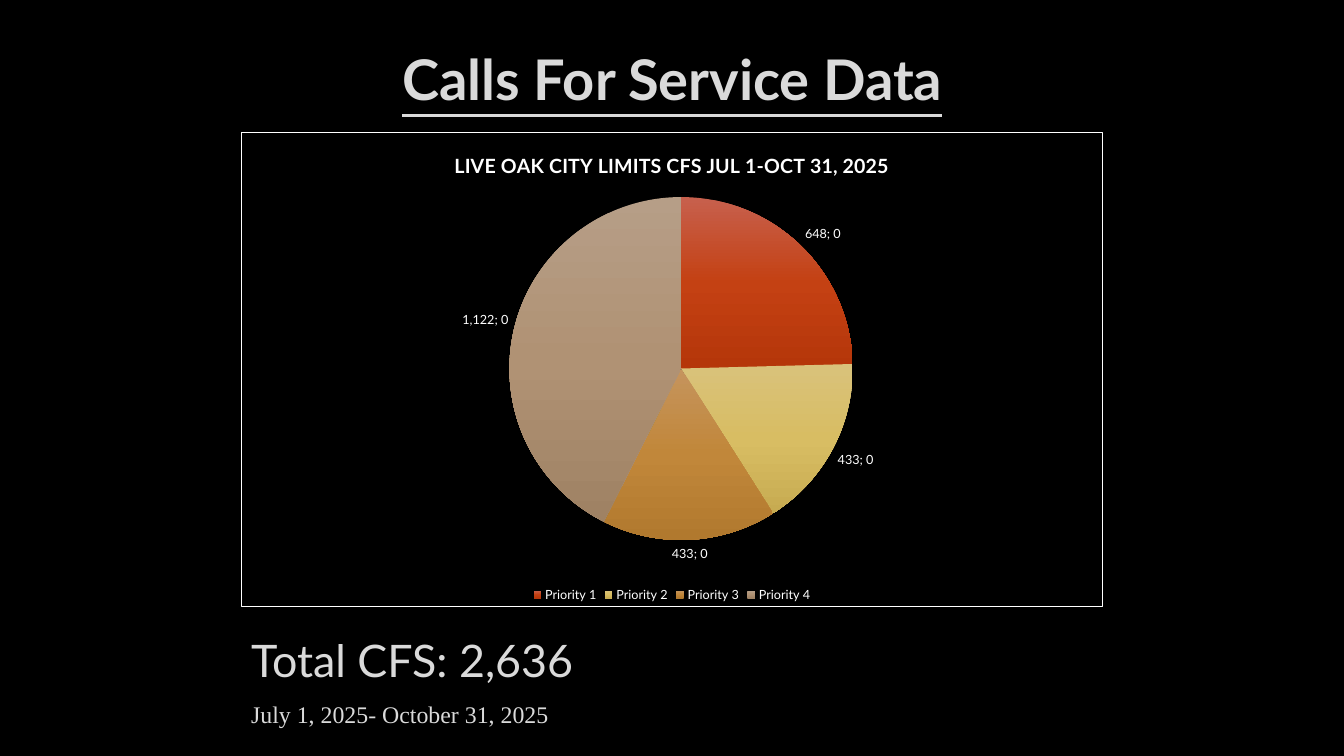
from pptx import Presentation
from pptx.chart.data import CategoryChartData
from pptx.dml.color import RGBColor
from pptx.enum.chart import XL_CHART_TYPE as ChartType, XL_LABEL_POSITION as LabelPos, XL_LEGEND_POSITION as LegendPos
from pptx.enum.text import MSO_ANCHOR as Anchor, MSO_AUTO_SIZE as AutoSize, PP_ALIGN as Align
from pptx.oxml import parse_xml
from pptx.oxml.ns import nsdecls
from pptx.util import Pt

BLACK = RGBColor(0x00, 0x00, 0x00)
WHITE = RGBColor(0xFF, 0xFF, 0xFF)
SILVER = RGBColor(0xDA, 0xDA, 0xDA)
REDS = [RGBColor(0xC7, 0x60, 0x4D), RGBColor(0xC4, 0x41, 0x13), RGBColor(0xB5, 0x36, 0x0A)]
YELLOWS = [RGBColor(0xD9, 0xC2, 0x7B), RGBColor(0xD8, 0xBD, 0x63), RGBColor(0xC7, 0xAB, 0x51)]
OCHRES = [RGBColor(0xC5, 0x94, 0x5D), RGBColor(0xC1, 0x87, 0x3A), RGBColor(0xB1, 0x79, 0x2E)]
TANS = [RGBColor(0xB6, 0x9E, 0x87), RGBColor(0xB0, 0x92, 0x74), RGBColor(0x9F, 0x82, 0x64)]

SLIDE_SIZE = (1344, 756)
SCALE = 12192000 / SLIDE_SIZE[0]
FONT = "Lato"

HEADING = "Calls For Service Data"
HEADING_BOX = (102, 25, 1141, 107)
TOTALS = [("Total CFS: 2,636", FONT, 32), ("July 1, 2025- October 31, 2025", "Times New Roman", 17)]
TOTALS_BOX = (241, 628, 538, 107)
CHART_TITLE = "LIVE OAK CITY LIMITS CFS JUL 1-OCT 31, 2025"
CHART_BOX = (241, 132, 862, 475)
PRIORITIES = [
    ("Priority 1", 648, REDS),
    ("Priority 2", 433, YELLOWS),
    ("Priority 3", 433, OCHRES),
    ("Priority 4", 1122, TANS),
]


def emu(box):
    """Turn px lengths into EMU."""
    return [round(length * SCALE) for length in box]


def set_font(font, size, color, name=FONT, bold=False):
    """Format a font."""
    font.name, font.size, font.bold = name, Pt(size), bold
    font.color.rgb = color


def place(placeholder, box, anchor):
    """Move a placeholder and return its text frame."""
    placeholder.left, placeholder.top, placeholder.width, placeholder.height = emu(box)
    frame = placeholder.text_frame
    frame.word_wrap = True
    frame.auto_size = AutoSize.NONE
    frame.vertical_anchor = anchor
    return frame


def add_heading(slide):
    """Fill the title placeholder."""
    frame = place(slide.shapes.title, HEADING_BOX, Anchor.MIDDLE)
    frame.text = HEADING
    heading = frame.paragraphs[0]
    heading.alignment = Align.CENTER
    set_font(heading.font, 40, SILVER, bold=True)
    heading.font.underline = True


def add_totals(slide):
    """Fill the body placeholder with unbulleted lines."""
    frame = place(slide.placeholders[1], TOTALS_BOX, Anchor.TOP)
    frame.text = "\n".join(text for text, _, _ in TOTALS)
    for line, (_, name, size) in zip(frame.paragraphs, TOTALS):
        set_font(line.font, size, SILVER, name)
        line.space_after = Pt(6)
        properties = line._p.get_or_add_pPr()
        properties.set("marL", "0")
        properties.set("indent", "0")
        bullet_off = parse_xml(f"<a:buNone {nsdecls('a')}/>")
        properties.find("{*}defRPr").addprevious(bullet_off)


def gradient(colors):
    """Build a top-to-bottom gradient with evenly spaced stops."""
    step = 100000 // (len(colors) - 1)
    stops = "".join(
        f'<a:gs pos="{i * step}"><a:srgbClr val="{color}"/></a:gs>' for i, color in enumerate(colors)
    )
    return parse_xml(
        f'<a:gradFill {nsdecls("a")} rotWithShape="1"><a:gsLst>{stops}</a:gsLst>'
        '<a:lin ang="5400000" scaled="0"/></a:gradFill>'
    )


def add_pie(slide):
    """Add the pie chart of calls by priority."""
    calls = CategoryChartData(number_format="#,##0")
    calls.categories = [name for name, _, _ in PRIORITIES]
    calls.add_series("Series 1", [count for _, count, _ in PRIORITIES])
    chart = slide.shapes.add_chart(ChartType.PIE, *emu(CHART_BOX), calls).chart
    set_font(chart.font, 10, WHITE)

    chart.has_title = True
    chart.chart_title.include_in_layout = False
    chart.chart_title.text_frame.text = CHART_TITLE
    set_font(chart.chart_title.text_frame.paragraphs[0].font, 14, WHITE, bold=True)

    chart.has_legend = True
    chart.legend.position = LegendPos.BOTTOM
    chart.legend.include_in_layout = False
    set_font(chart.legend.font, 9, WHITE)

    pie = chart.plots[0]
    pie.vary_by_categories = True
    series = pie.series[0]
    for i, (_, _, colors) in enumerate(PRIORITIES):
        point = series.points[i].format
        point.line.fill.background()
        point.fill.gradient()
        fill = series._element.xpath("c:dPt/c:spPr/a:gradFill")[i]
        fill.getparent().replace(fill, gradient(colors))

    labels = series.data_labels
    labels.show_value = labels.show_percentage = True
    labels.position = LabelPos.OUTSIDE_END
    labels.number_format, labels.number_format_is_linked = "#,##0", False
    set_font(labels.font, 9, WHITE)

    border = parse_xml(
        f'<c:spPr {nsdecls("c", "a")}><a:noFill/><a:ln w="{Pt(0.75)}"><a:solidFill>'
        f'<a:srgbClr val="{WHITE}"/></a:solidFill></a:ln></c:spPr>'
    )
    chart._chartSpace.find("{*}chart").addnext(border)


def main():
    """Build and save the slide."""
    deck = Presentation()
    deck.slide_width, deck.slide_height = emu(SLIDE_SIZE)
    slide = deck.slides.add_slide(deck.slide_layouts[1])
    slide.background.fill.solid()
    slide.background.fill.fore_color.rgb = BLACK
    add_heading(slide)
    add_totals(slide)
    add_pie(slide)
    deck.save("out.pptx")


if __name__ == "__main__":
    main()
